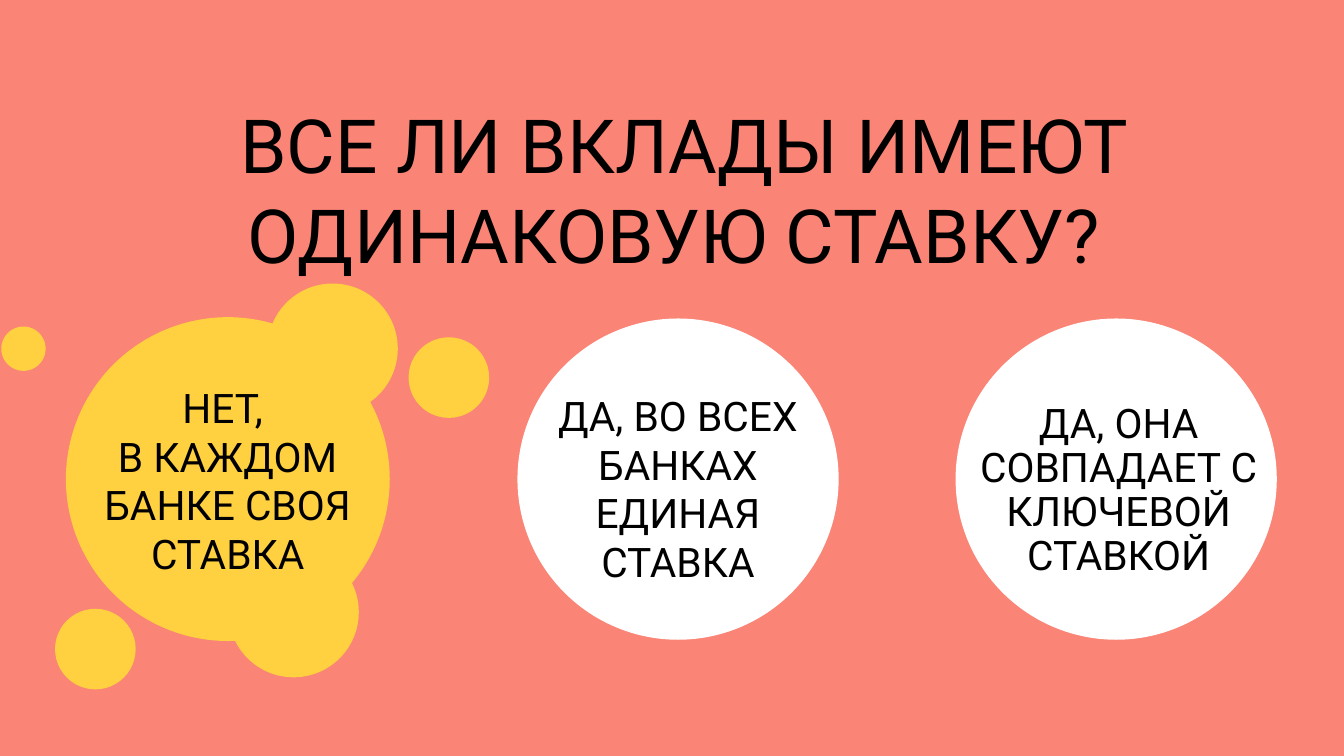
from pptx import Presentation, util as u
from pptx.dml.color import RGBColor
from pptx.enum import shapes, text

HUES = {"coral": "FA8475", "sun": "FFD040", "white": "FFFFFF", "ink": "000000"}
SHAPE = shapes.MSO_SHAPE
WIDTH = 10
HEIGHT = WIDTH * 9 / 16
BLOBS = [(0.49, 2.36, 2.41), (1.99, 2.11, 0.97), (1.7, 4.07, 0.97),
         (0.41, 4.53, 0.6), (3.04, 2.51, 0.6), (0.01, 2.43, 0.33)]
DISCS = [3.85, 7.11]
ANSWERS = [
    ("НЕТ, \vВ КАЖДОМ БАНКЕ СВОЯ СТАВКА", 0.53, 2.73, 1.67, None),
    ("ДА, ВО ВСЕХ БАНКАХ ЕДИНАЯ СТАВКА", 3.88, 2.8, 1.66, None),
    ("ДА, ОНА СОВПАДАЕТ С КЛЮЧЕВОЙ СТАВКОЙ", 7.16, 2.76, 1.65, 0.9),
]


def hue(name):
    return RGBColor.from_string(HUES[name])


def add_form(parent, kind, box, fill):
    form = parent.add_shape(kind, *map(u.Inches, box))
    form.shadow.inherit = False
    form.fill.solid()
    form.fill.fore_color.rgb = hue(fill)
    form.line.fill.background()


def add_disc(parent, left, top, size, fill):
    add_form(parent, SHAPE.OVAL, (left, top, size, size), fill)


def add_label(parent, words, box, size, pitch=None):
    frame = parent.add_textbox(*map(u.Inches, box)).text_frame
    frame.word_wrap = True
    frame.vertical_anchor = text.MSO_ANCHOR.BOTTOM
    frame.margin_left = frame.margin_right = u.Inches(0.1)
    frame.margin_top = frame.margin_bottom = u.Inches(0.1)
    para = frame.paragraphs[0]
    para.text = words
    para.alignment = text.PP_ALIGN.CENTER
    para.line_spacing = pitch
    para.font.size = u.Pt(size)
    para.font.name = "Roboto"
    para.font.color.rgb = hue("ink")


def main():
    deck = Presentation()
    deck.slide_width, deck.slide_height = u.Inches(WIDTH), u.Inches(HEIGHT)
    parts = deck.slides.add_slide(deck.slide_layouts[6]).shapes

    add_form(parts, SHAPE.RECTANGLE, (0, -0.01, WIDTH, 5.64), "coral")
    splash = parts.add_group_shape().shapes
    for left, top, size in BLOBS:
        add_disc(splash, left, top, size, "sun")
    for left in DISCS:
        add_disc(parts, left, 2.37, 2.39, "white")

    add_label(parts, "ВСЕ ЛИ ВКЛАДЫ ИМЕЮТ ОДИНАКОВУЮ СТАВКУ? ",
              (0.95, 0.38, 8.27, 1.79), 40)
    for words, left, top, height, pitch in ANSWERS:
        add_label(parts, words, (left, top, 2.33, height), 21.8, pitch)

    deck.save("out.pptx")


if __name__ == "__main__":
    main()
